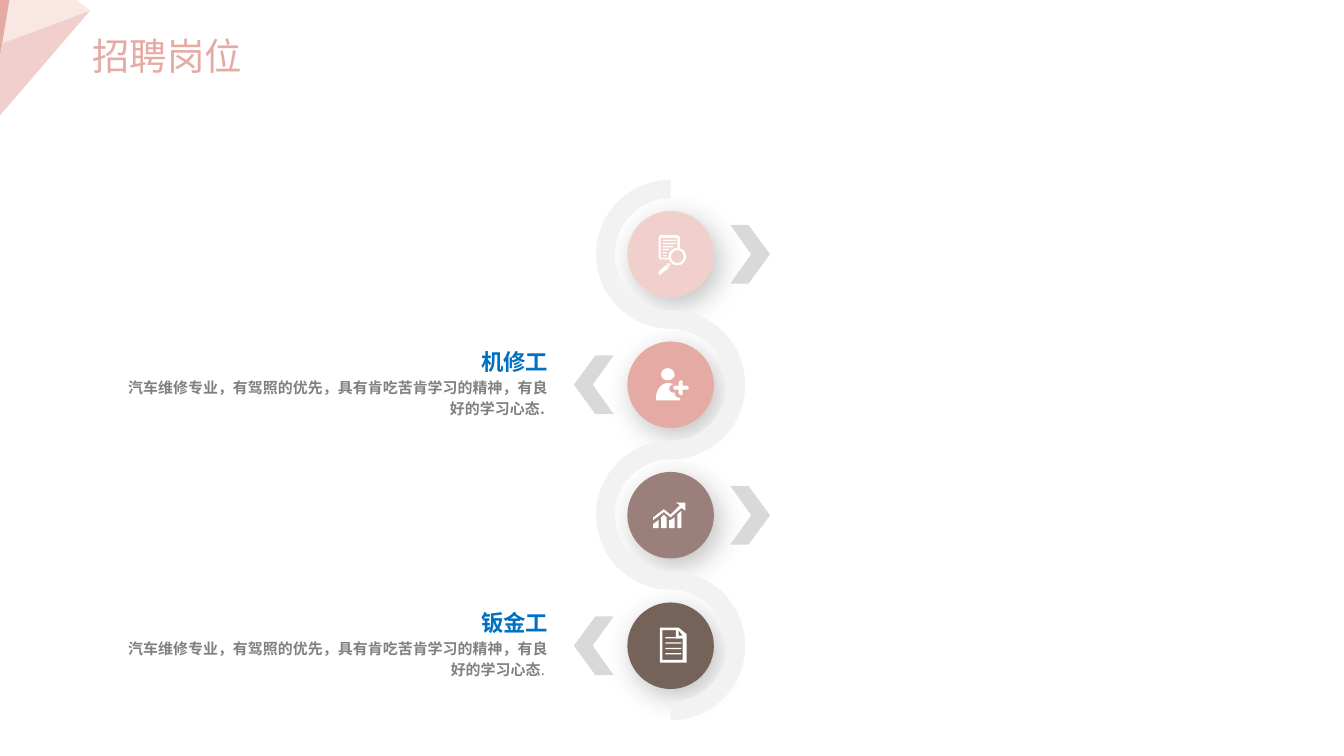
from math import cos, pi, sin
from pptx import Presentation
from pptx.dml import color
from pptx.enum import shapes, text
from pptx.oxml import parse_xml
from pptx.util import Emu, Pt

THEME = {
    "pale": "F1CFCD", "rose": "E5AAA4", "mauve": "9B7F7B", "brown": "756359",
    "blush": "F9E7E3", "track": "F2F2F2", "arrow": "D9D9D9", "white": "FFFFFF",
    "blue": "0070C0", "grey": "808080", "font": "Noto Sans CJK SC",
    "title": 20, "head": 12, "body": 8,
}
SPACE = "http://schemas.openxmlformats.org/drawingml/2006/main"

deck = Presentation()
deck.slide_width, deck.slide_height = Emu(9144000), Emu(5143500)
UNIT = deck.slide_width // 1000
slide = deck.slides.add_slide(deck.slide_layouts[6])
page = slide.shapes


def draw(home, tint, *loops):
    pen = None
    for loop in loops:
        dots = []
        for step in loop:
            if len(step) == 2:
                dots.append(step)
                continue
            a, b, c, d, e, f = step
            x, y = dots[-1]
            for n in range(1, 9):
                t = n / 8
                s = 1 - t
                dots.append((s**3 * x + 3 * s * s * t * a + 3 * s * t * t * c + t**3 * e,
                             s**3 * y + 3 * s * s * t * b + 3 * s * t * t * d + t**3 * f))
        dots = [(x * UNIT, y * UNIT) for x, y in dots]
        if pen is None:
            pen = home.build_freeform(*dots[0], scale=1.0)
        else:
            pen.move_to(*dots[0])
        pen.add_line_segments(dots[1:], close=True)
    shape = pen.convert_to_shape()
    shape.shadow.inherit = False
    shape.fill.solid()
    shape.fill.fore_color.rgb = color.RGBColor.from_string(THEME[tint])
    shape.line.fill.background()


def write(words, frame, size, tint, bold=False, side=None, gap=None, fresh=True):
    para = frame.paragraphs[-1]
    if fresh and para.runs:
        para = frame.add_paragraph()
    if side:
        para.alignment = side
    if gap:
        para.line_spacing = gap
    run = para.add_run()
    run.text = words
    font = run.font
    font.size, font.bold, font.name = Pt(THEME[size]), bold, THEME["font"]
    font.color.rgb = color.RGBColor.from_string(THEME[tint])
    run._r.get_or_add_rPr().append(parse_xml(
        f'<a:ea xmlns:a="{SPACE}" typeface="{THEME["font"]}"/>'))


MID, TOP, PITCH, DISC = 499, 189.2, 97.1, 64.4
rows = [TOP + PITCH * n for n in range(4)]

for row, tint in zip(rows, ("pale", "rose", "mauve", "brown")):
    disc = page.add_shape(shapes.MSO_SHAPE.OVAL, *[
        Emu(int(n * UNIT)) for n in (MID - DISC / 2, row - DISC / 2, DISC, DISC)])
    disc.shadow.inherit = False
    disc.fill.solid()
    disc.fill.fore_color.rgb = color.RGBColor.from_string(THEME[tint])
    disc.line.fill.background()
    glow = disc._element.spPr.find(f"{{{SPACE}}}effectLst")
    glow.append(parse_xml(
        f'<a:outerShdw xmlns:a="{SPACE}" blurRad="190500" dist="63500" dir="3300000" '
        'algn="tl" rotWithShape="0"><a:srgbClr val="333333"><a:alpha val="30000"/>'
        '</a:srgbClr></a:outerShdw>'))

edges = []
for reach in ((55.5, 41.6), (41.6, 55.5)):
    edges.append([(MID + (-1, 1)[n % 2] * reach[n % 2] * cos(t),
                   row + reach[n % 2] * sin(t))
                  for n, row in enumerate(rows)
                  for t in [pi * (k / 32 - 0.5) for k in range(33)]])
draw(page, "track", edges[0] + edges[1][::-1])

for n, row in enumerate(rows):
    way = (1, -1)[n % 2]
    draw(page, "arrow", [(500 + way * x, row + y) for x, y in
                         ((43.4, -21.8), (59, 0), (43.4, 21.8),
                          (57, 21.8), (73, 0), (57, -21.8))])

user = page.add_group_shape().shapes
draw(user, "white",
     [(511, 287), (508, 287), (508, 285), (508, 284, 508, 283, 507, 283),
      (506, 283, 505, 284, 505, 285), (505, 287), (503, 287),
      (501, 287, 501, 288, 501, 288.5), (501, 289, 501, 290, 503, 290),
      (505, 290), (505, 293), (505, 293, 506, 294, 507, 294),
      (508, 294, 508, 293, 508, 293), (508, 290), (511, 290),
      (512, 290, 512.5, 289, 512.5, 288.5), (512.5, 288, 512, 287, 511, 287)])
draw(user, "white",
     [(497, 283), (499, 283, 502, 281, 502, 279), (502, 276, 499, 274, 497, 274),
      (494, 274, 492, 276, 492, 279), (492, 281, 494, 283, 497, 283)],
     [(506, 296), (505, 296, 502, 296, 502, 292), (502, 292, 498, 293, 498, 289),
      (498, 287, 500, 286, 501, 286), (499, 285, 498, 285, 497, 285),
      (492, 285, 488, 290, 488, 297), (488, 298), (506, 298)])

search = page.add_group_shape().shapes
draw(search, "white", *[
    [(493, y), (x, y), (x, y + 1), (493, y + 1)] for y, x in
    ((178.3, 503), (180.7, 503), (183, 501), (185.2, 498), (187.5, 496), (189.8, 496))])
draw(search, "white", *[
    [(504 + r * cos(pi * k / 20), 191 + r * sin(pi * k / 20)) for k in range(40)]
    for r in (6.5, 4.7)])
draw(search, "white",
     [(498, 196), (498, 196, 497, 196, 496, 196), (498, 198), (499, 198, 499, 197, 498, 196)],
     [(490, 202), (490, 203, 490, 204, 490, 204), (491, 205, 491, 205, 492, 204),
      (498, 199), (496, 197)])
draw(search, "white",
     [(498, 192), (492, 192), (491.5, 192, 491.5, 192, 491.5, 191), (491.5, 178),
      (491.5, 177, 491.5, 177, 492, 177), (503, 177), (504, 177, 504, 177, 504, 178),
      (504, 185), (505, 185, 505, 185, 506, 185), (506, 178),
      (506, 176, 505, 175, 503, 175), (492, 175), (491, 175, 490, 176, 490, 178),
      (490, 191), (490, 192, 491, 193, 492, 193), (498, 193)])

trend = page.add_group_shape().shapes
draw(trend, "white",
     [(492, 385), (492, 393), (496, 393), (496, 385), (494, 383)],
     [(486, 393), (490, 393), (490, 387), (486, 390)],
     [(504, 383), (504, 393), (507, 393), (507, 380)],
     [(498, 387), (498, 393), (502, 393), (502, 385), (499, 387)])
draw(trend, "white",
     [(510, 374), (503, 374), (506, 376), (499, 383), (494, 379), (486, 385),
      (486, 387), (494, 381), (499, 385), (507, 378), (510, 380)])

sheet = page.add_group_shape().shapes
draw(sheet, "white",
     [(511, 472), (505, 467), (491, 467), (491, 493), (511, 493)],
     [(508, 473), (505, 473), (505, 469)],
     [(508, 491), (493, 491), (493, 469), (503, 469), (503, 475), (508, 475)])
for y in range(474, 487, 4):
    bar = sheet.add_shape(shapes.MSO_SHAPE.RECTANGLE,
                          *[Emu(n * UNIT) for n in (495, y, 12, 1)])
    bar.shadow.inherit = False
    bar.fill.solid()
    bar.fill.fore_color.rgb = color.RGBColor.from_string(THEME["white"])
    bar.line.fill.background()

RIGHT = text.PP_ALIGN.RIGHT
duty = "汽车维修专业，有驾照的优先，具有肯吃苦肯学习的精神，有良好的学习心态"
for top, name, firm in ((255, "机修工", True), (449, "钣金工", False)):
    frame = page.add_textbox(*[Emu(n * UNIT) for n in (85, top, 323, 57)]).text_frame
    frame.word_wrap = True
    frame.auto_size = text.MSO_AUTO_SIZE.SHAPE_TO_FIT_TEXT
    frame.margin_left = frame.margin_right = frame.margin_top = frame.margin_bottom = 0
    write(name, frame, "head", "blue", bold=True, side=RIGHT, gap=1.2)
    write(duty + ". " * firm, frame, "body", "grey", bold=True, side=RIGHT, gap=1.2)
    if not firm:
        write(". ", frame, "body", "grey", fresh=False)

corner = page.add_group_shape().shapes
draw(corner, "pale", [(67, 8), (2, 32), (-1, 48), (-1, 87)])
draw(corner, "blush", [(67, 8), (57, 0), (7, 0), (2, 32)])
draw(corner, "rose", [(7, 0), (-1, 0), (-1, 48)])

frame = page.add_textbox(*[Emu(n * UNIT) for n in (59, 20, 166, 44)]).text_frame
frame.word_wrap = True
frame.auto_size = text.MSO_AUTO_SIZE.SHAPE_TO_FIT_TEXT
write("招聘岗位", frame, "title", "rose")

deck.save("out.pptx")
